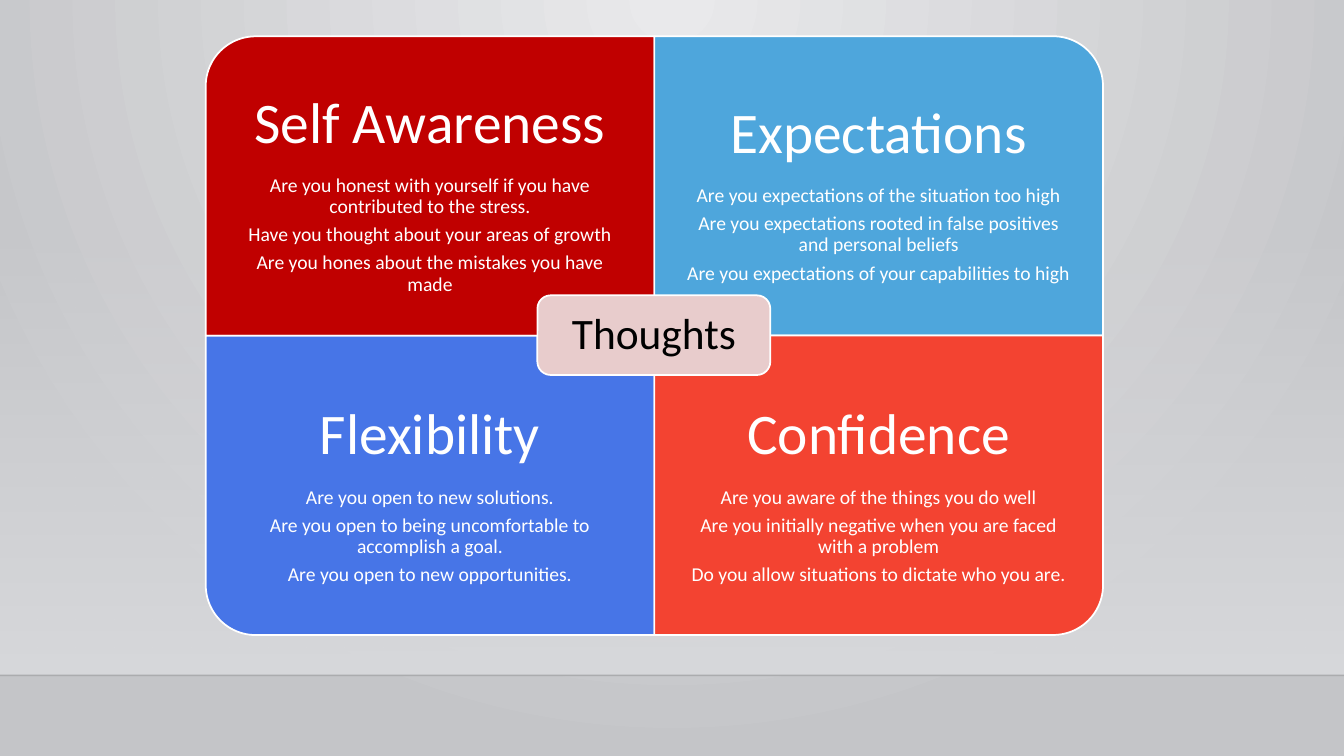
from dataclasses import dataclass

import lxml.etree
import pptx
import pptx.dml.color
import pptx.enum.shapes
import pptx.enum.text
import pptx.oxml
import pptx.oxml.ns
import pptx.util

Inches = pptx.util.Inches
Pt = pptx.util.Pt
qn = pptx.oxml.ns.qn
SHAPE = pptx.enum.shapes.MSO_SHAPE
ANCHOR = pptx.enum.text.MSO_ANCHOR

COLORS = {
    "white": "FFFFFF",
    "black": "000000",
    "red": "C00000",
    "sky": "4EA6DC",
    "blue": "4775E7",
    "coral": "F34331",
    "pink": "E8CCCC",
    "floor": "D8D9DC",
    "glow": "E9E9EB",
    "edge": "C4C5C8",
    "horizon": "000001",
}
FONT = "Calibri"
WIDTH, HEIGHT = 13.33, 7.5
HORIZON = 6.7
LEFT, TOP = 2.04, 0.36
CELL_W, CELL_H = 4.45, 2.97


@dataclass
class Quadrant:
    col: int
    row: int
    rotation: int
    color: str
    text_top: float
    title: str
    questions: list[str]


QUADRANTS = [
    Quadrant(0, 0, 270, "red", 0.93, "Self Awareness", [
        "Are you honest with yourself if you have contributed to the stress.",
        "Have you thought about your areas of growth",
        "Are you hones about the mistakes you have made",
    ]),
    Quadrant(1, 0, 0, "sky", 1.03, "Expectations", [
        "Are you expectations of the situation too high",
        "Are you expectations rooted in false positives and personal beliefs",
        "Are you expectations of your capabilities to high",
    ]),
    Quadrant(0, 1, 180, "blue", 4.02, "Flexibility", [
        "Are you open to new solutions.",
        "Are you open to being uncomfortable to accomplish a goal.",
        "Are you open to new opportunities.",
    ]),
    Quadrant(1, 1, 90, "coral", 4.02, "Confidence", [
        "Are you aware of the things you do well",
        "Are you initially negative when you are faced with a problem",
        "Do you allow situations to dictate who you are.",
    ]),
]


def rgb(name: str) -> pptx.dml.color.RGBColor:
    return pptx.dml.color.RGBColor.from_string(COLORS[name])


def gradient(stops: list[tuple[int, str, int]], direction: str) -> lxml.etree._Element:
    gs = "".join(
        f'<a:gs pos="{pos * 1000}"><a:srgbClr val="{COLORS[color]}">'
        f'<a:alpha val="{alpha * 1000}"/></a:srgbClr></a:gs>'
        for pos, color, alpha in stops
    )
    return pptx.oxml.parse_xml(
        f'<a:gradFill {pptx.oxml.ns.nsdecls("a")} rotWithShape="1">'
        f"<a:gsLst>{gs}</a:gsLst>{direction}</a:gradFill>"
    )


def replace_solid(parent: lxml.etree._Element, grad: lxml.etree._Element) -> None:
    parent.replace(parent.find(qn("a:solidFill")), grad)


def add_backdrop(s: pptx.slide.Slide) -> None:
    s.background.fill.solid()
    s.background.fill.fore_color.rgb = rgb("edge")
    replace_solid(next(s.element.iter(qn("p:bgPr"))), gradient(
        [(0, "glow", 100), (100, "edge", 100)],
        '<a:path path="circle"><a:fillToRect l="43000" r="43000" b="100000"/></a:path>',
    ))
    sp = s.shapes.add_shape(
        SHAPE.RECTANGLE, 0, Inches(2.21), Inches(WIDTH), Inches(HORIZON - 2.21))
    sp.shadow.inherit = False
    sp.fill.solid()
    sp.line.fill.background()
    replace_solid(sp.element.spPr, gradient(
        [(0, "floor", 0), (100, "floor", 100)], '<a:lin ang="5400000" scaled="0"/>'))

    line = s.shapes.add_connector(
        pptx.enum.shapes.MSO_CONNECTOR.STRAIGHT,
        0, Inches(HORIZON), Inches(WIDTH), Inches(HORIZON))
    line.line.color.rgb = rgb("horizon")
    line.line.width = Pt(1)
    sp_pr = line.element.spPr
    clr = next(sp_pr.iter(qn("a:srgbClr")))
    lxml.etree.SubElement(clr, qn("a:alpha")).set("val", "20000")
    lxml.etree.SubElement(sp_pr, qn("a:effectLst"))


def add_panel(s: pptx.slide.Slide, kind: SHAPE, left: float, top: float,
              width: float, height: float, color: str) -> pptx.shapes.autoshape.Shape:
    sp = s.shapes.add_shape(
        kind, Inches(left), Inches(top), Inches(width), Inches(height))
    sp.shadow.inherit = False
    sp.fill.solid()
    sp.fill.fore_color.rgb = rgb(color)
    sp.line.color.rgb = rgb("white")
    sp.line.width = Pt(1.25)
    return sp


def set_text(tf: pptx.text.text.TextFrame, lines: list[tuple[str, int]], color: str,
             anchor: ANCHOR, inset: float) -> None:
    tf.word_wrap = True
    tf.vertical_anchor = anchor
    tf.margin_left = tf.margin_right = Inches(inset)
    tf.margin_top = tf.margin_bottom = 0
    tf.text = "\n".join(text for text, _ in lines)
    for p, (_, size) in zip(tf.paragraphs, lines):
        p.alignment = pptx.enum.text.PP_ALIGN.CENTER
        p.line_spacing = 0.9
        p.space_after = Pt(round(size * 0.35, 1))
        for r in p.runs:
            r.font.name = FONT
            r.font.size = Pt(size)
            r.font.color.rgb = rgb(color)


def add_quadrant(s: pptx.slide.Slide, q: Quadrant) -> None:
    left, top = LEFT + q.col * CELL_W, TOP + q.row * CELL_H
    width, height = (CELL_H, CELL_W) if q.rotation % 180 else (CELL_W, CELL_H)
    sp = add_panel(s, SHAPE.ROUND_1_RECTANGLE, left + (CELL_W - width) / 2,
                   top + (CELL_H - height) / 2, width, height, q.color)
    sp.rotation = q.rotation
    box = s.shapes.add_textbox(
        Inches(left), Inches(q.text_top), Inches(CELL_W), Inches(2))
    lines = [(q.title, 41)] + [(text, 14) for text in q.questions]
    set_text(box.text_frame, lines, "white", ANCHOR.TOP, 0.31)


def main() -> None:
    prs = pptx.Presentation()
    prs.slide_width, prs.slide_height = Inches(WIDTH), Inches(HEIGHT)
    s = prs.slides.add_slide(prs.slide_layouts[6])
    add_backdrop(s)
    for q in QUADRANTS:
        add_quadrant(s, q)
    hub = add_panel(s, SHAPE.ROUNDED_RECTANGLE, 5.33, 2.93, 2.31, 0.79, "pink")
    set_text(hub.text_frame, [("Thoughts", 31)], "black", ANCHOR.MIDDLE, 0.17)
    prs.save("out.pptx")


if __name__ == "__main__":
    main()
